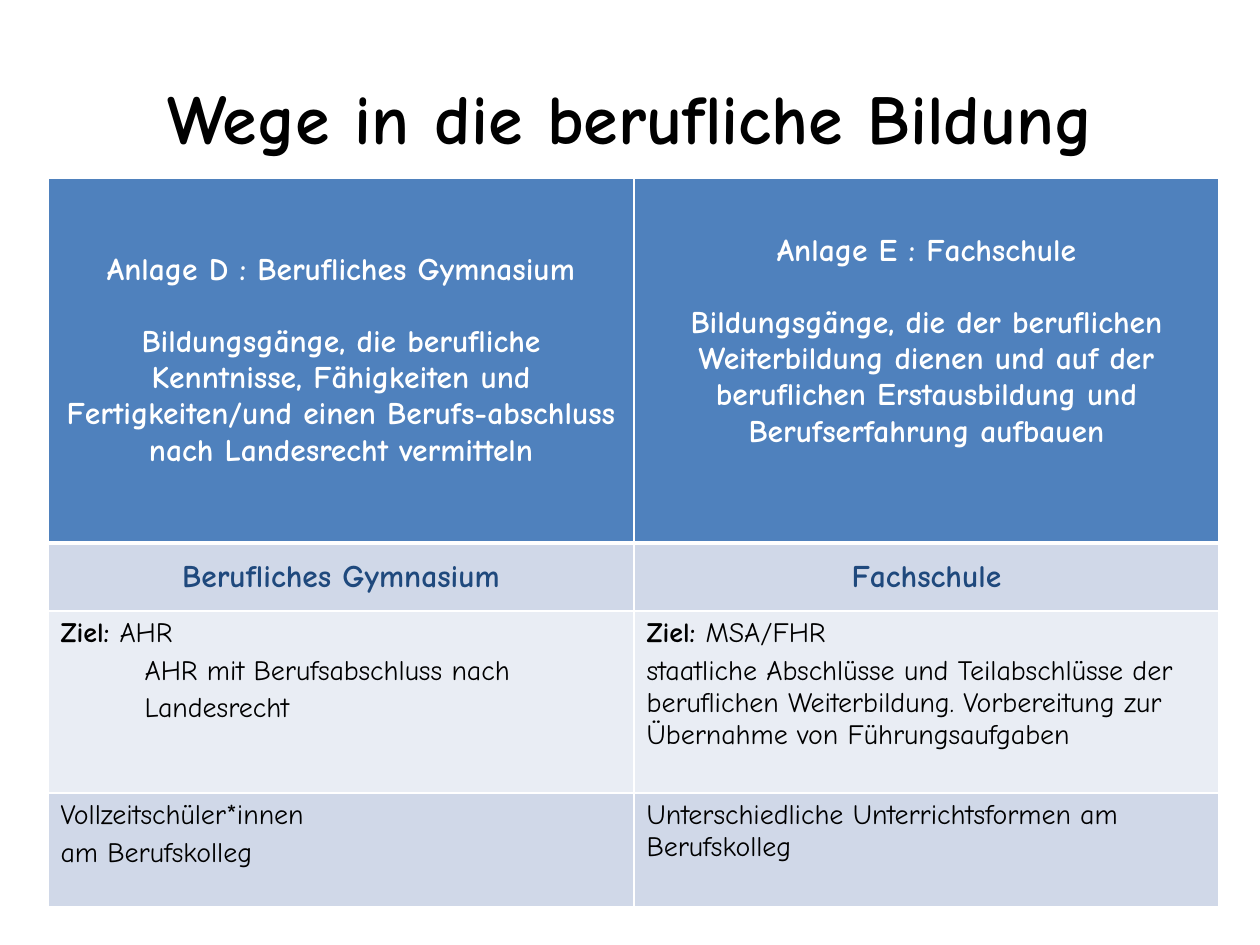
from lxml import etree
from pptx import Presentation
from pptx.dml.color import RGBColor
from pptx.enum.text import MSO_ANCHOR, PP_ALIGN
from pptx.oxml.ns import qn
from pptx.util import Emu, Pt

CENTER, LEFT = PP_ALIGN.CENTER, PP_ALIGN.LEFT
MIDDLE, TOP = MSO_ANCHOR.MIDDLE, MSO_ANCHOR.TOP
FONT = "Comic Neue"
BLACK, WHITE, NAVY = "000000", "FFFFFF", "1F497D"
BLUE, BAND, PALE = "4F81BD", "D0D8E8", "E9EDF4"


def px(n):
    return Emu(round(n * 914400 / 126))


def rgb(value):
    return RGBColor.from_string(value)


def add_text(p, text, size=16, color=BLACK, bold=False):
    r = p.add_run()
    r.text = text
    r.font.name, r.font.size, r.font.bold = FONT, Pt(size), bold
    r.font.color.rgb = rgb(color)


def add_border(cell, side, width, color=WHITE):
    ln = etree.Element(qn(f"a:{side}"), w=str(Pt(width)))
    fill = etree.SubElement(ln, qn("a:solidFill"))
    etree.SubElement(fill, qn("a:srgbClr"), val=color)
    return ln


class Deck:
    """Holds the presentation and the current slide."""

    def __init__(self, width, height):
        self.prs = Presentation()
        self.prs.slide_width, self.prs.slide_height = px(width), px(height)
        self.s = self.prs.slides.add_slide(self.prs.slide_layouts[5])

    def title(self, text, x, y, w, h):
        sp = self.s.shapes.title
        sp.left, sp.top, sp.width, sp.height = px(x), px(y), px(w), px(h)
        tf = sp.text_frame
        tf.vertical_anchor = MIDDLE
        p = tf.paragraphs[0]
        p.alignment = CENTER
        add_text(p, text, size=40, bold=True)

    def table(self, x, y, cols, rows):
        frame = self.s.shapes.add_table(len(rows), len(cols), px(x), px(y),
                                        px(sum(cols)), px(sum(rows)))
        table = frame.table
        for col, w in zip(table.columns, cols):
            col.width = px(w)
        for row, h in zip(table.rows, rows):
            row.height = px(h)
        return table

    def cell(self, cell, paras, fill, align=LEFT, anchor=TOP, gap=3.2,
             bottom=6, rule=1, **style):
        """Each paragraph is (indent, runs); each run is (text, bold)."""
        cell.fill.solid()
        cell.fill.fore_color.rgb = rgb(fill)
        cell.vertical_anchor = anchor
        cell.margin_bottom = px(bottom)
        tf = cell.text_frame
        for i, (indent, runs) in enumerate(paras):
            p = tf.add_paragraph() if i else tf.paragraphs[0]
            p.alignment = align
            p.space_before = Pt(gap if i else 0)
            if indent:
                p._p.get_or_add_pPr().set("marL", str(px(indent)))
            for text, bold in runs:
                add_text(p, text, bold=bold, **style)
        # Border lines come before the fill in the cell properties
        for i, side in enumerate(("lnL", "lnR", "lnT", "lnB")):
            width = rule if side == "lnB" else 1
            cell._tc.tcPr.insert(i, add_border(cell, side, width))


def para(text, bold=False, indent=0):
    return indent, [(text, bold)]


def goal(text):
    return 0, [("Ziel: ", True), (text, False)]


HEADERS = [
    ("Anlage D : Berufliches Gymnasium",
     "Bildungsgänge, die berufliche Kenntnisse, Fähigkeiten und "
     "Fertigkeiten/und einen Berufs-abschluss nach Landesrecht vermitteln", 6),
    ("Anlage E : Fachschule",
     "Bildungsgänge, die der beruflichen Weiterbildung dienen und auf der "
     "beruflichen Erstausbildung und Berufserfahrung aufbauen", 44),
]
SCHOOLS = ["Berufliches Gymnasium", "Fachschule"]
GOALS = [
    [goal("AHR"),
     para("AHR mit Berufsabschluss nach", indent=84),
     para("Landesrecht", indent=84)],
    [goal("MSA/FHR"),
     para("staatliche Abschlüsse und Teilabschlüsse der beruflichen "
          "Weiterbildung. Vorbereitung zur Übernahme von Führungsaufgaben")],
]
FORMS = [
    [para("Vollzeitschüler*innen"), para("am Berufskolleg")],
    [para("Unterschiedliche Unterrichtsformen am Berufskolleg")],
]


def main():
    deck = Deck(1260, 945)
    deck.title("Wege in die berufliche Bildung", 63, 38, 1134, 157)
    table = deck.table(48, 178, cols=[586, 585], rows=[365, 68, 182, 114])

    # Header row and school names
    for c, (name, text, bottom) in enumerate(HEADERS):
        deck.cell(table.cell(0, c), [para(name, True), para(text, True)], BLUE,
                  align=CENTER, anchor=MIDDLE, gap=20, bottom=bottom, rule=3,
                  size=18, color=WHITE)
    for c, name in enumerate(SCHOOLS):
        deck.cell(table.cell(1, c), [para(name, True)], BAND,
                  align=CENTER, anchor=MIDDLE, size=18, color=NAVY)

    # Goals and forms of teaching
    for row, (contents, fill) in enumerate([(GOALS, PALE), (FORMS, BAND)], 2):
        for c, paras in enumerate(contents):
            deck.cell(table.cell(row, c), paras, fill)

    deck.prs.save("out.pptx")


if __name__ == "__main__":
    main()
